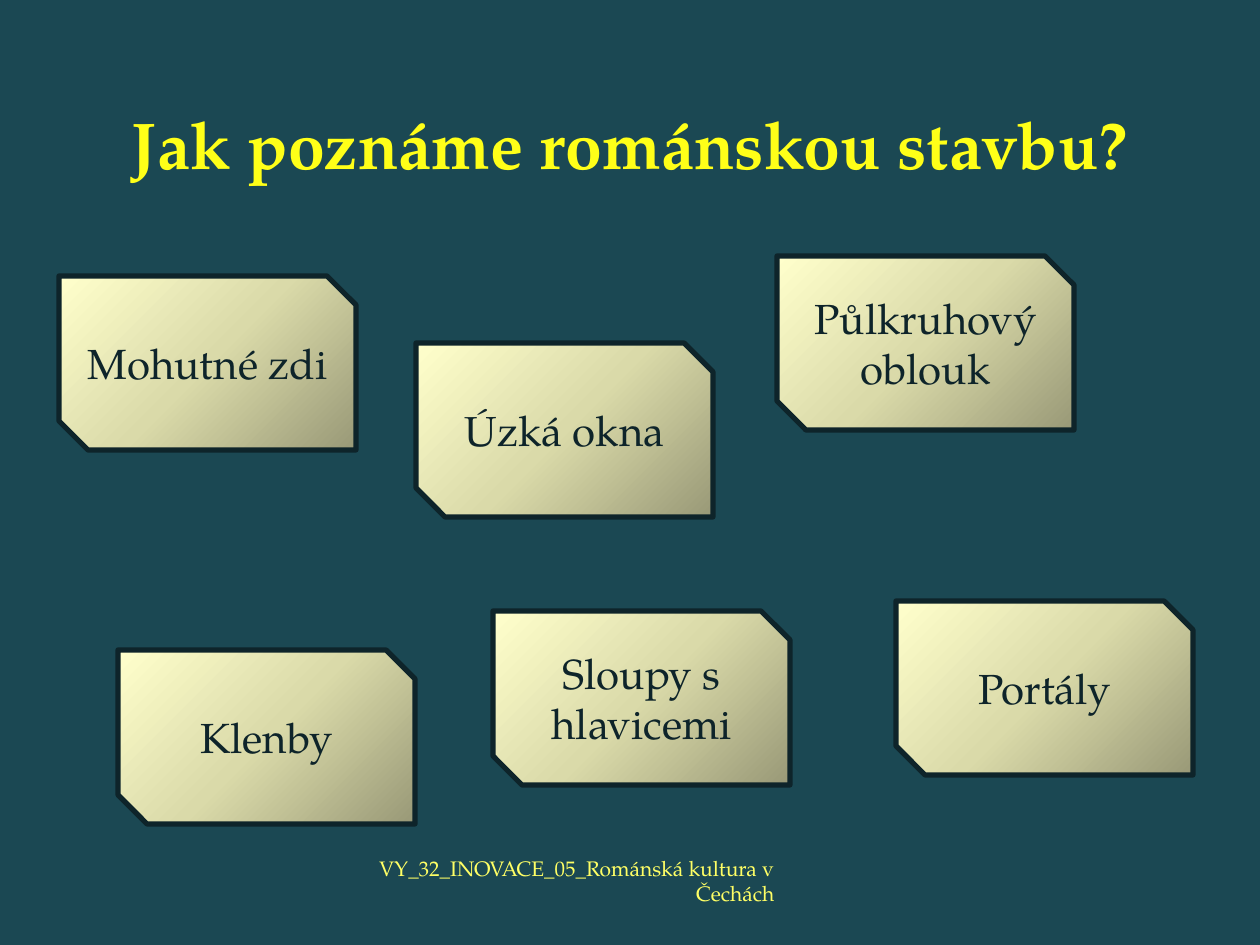
from typing import Any, NamedTuple

from pptx import Presentation
from pptx import util as u
from pptx.dml.color import RGBColor
from pptx.enum import shapes, text
from pptx.oxml import parse_xml
from pptx.oxml.ns import nsdecls

PX_PER_INCH = 126
FONT = "TeX Gyre Pagella"
BACKGROUND = "1B4853"
DARK = "0E242A"
TITLE_COLOR = "FFFF18"
FOOTER_COLOR = "FFFF65"
CARD_STOPS = ((0, "999977"), (50, "DADAA9"), (100, "FFFFCC"))
CARD_SIZE = (297, 174)


class Card(NamedTuple):
    left: int
    top: int
    label: str


CARDS = (
    Card(59, 276, "Mohutné zdi"),
    Card(416, 343, "Úzká okna"),
    Card(118, 650, "Klenby"),
    Card(896, 601, "Portály"),
    Card(777, 256, "Půlkruhový oblouk"),
    Card(493, 611, "Sloupy s hlavicemi"),
)


def px(length: int) -> int:
    return u.Inches(length / PX_PER_INCH)


def color(value: str) -> RGBColor:
    return RGBColor.from_string(value)


def write(shape: Any, content: str, size: float, hex_color: str, anchor: Any,
          alignment: Any, bold: bool = False) -> None:
    frame = shape.text_frame
    frame.text = content
    paragraph = frame.paragraphs[0]
    paragraph.alignment = alignment
    frame_format = {
        "word_wrap": True,
        "auto_size": text.MSO_AUTO_SIZE.NONE,
        "vertical_anchor": anchor,
    }
    for name, value in frame_format.items():
        setattr(frame, name, value)
    font = paragraph.runs[0].font
    for name, value in {"name": FONT, "size": u.Pt(size), "bold": bold}.items():
        setattr(font, name, value)
    font.color.rgb = color(hex_color)


def fill_from_corner(shape: Any) -> None:
    stops = "".join(
        f'<a:gs pos="{position * 1000}"><a:srgbClr val="{value}"/></a:gs>'
        for position, value in CARD_STOPS
    )
    gradient = parse_xml(
        f'<a:gradFill {nsdecls("a")} rotWithShape="1"><a:gsLst>{stops}</a:gsLst>'
        '<a:path path="circle"><a:fillToRect l="100000" t="100000"/></a:path>'
        "</a:gradFill>"
    )
    shape.fill.background()
    properties = shape.element.spPr
    properties.replace(properties.find("{*}noFill"), gradient)


def draw_card(slide: Any, card: Card) -> None:
    shape = slide.shapes.add_shape(
        shapes.MSO_SHAPE.SNIP_2_DIAG_RECTANGLE,
        px(card.left), px(card.top), *map(px, CARD_SIZE),
    )
    shape.shadow.inherit = False
    fill_from_corner(shape)
    shape.line.color.rgb = color(DARK)
    shape.line.width = u.Pt(3)
    write(shape, card.label, 24, DARK, text.MSO_ANCHOR.MIDDLE, text.PP_ALIGN.CENTER)


def draw_title(slide: Any) -> None:
    title = slide.shapes.title
    place = {"left": 63, "top": 21, "width": 1134, "height": 168}
    for name, value in place.items():
        setattr(title, name, px(value))
    write(title, "Jak poznáme románskou stavbu?", 37.8, TITLE_COLOR,
          text.MSO_ANCHOR.BOTTOM, text.PP_ALIGN.CENTER, bold=True)


def draw_footer(slide: Any) -> None:
    footer = slide.shapes.add_textbox(px(293), px(854), px(494), px(53))
    write(footer, "VY_32_INOVACE_05_Románská kultura v Čechách", 12, FOOTER_COLOR,
          text.MSO_ANCHOR.MIDDLE, text.PP_ALIGN.RIGHT)


def main() -> None:
    presentation = Presentation()
    presentation.slide_width = px(1260)
    presentation.slide_height = px(945)
    slide = presentation.slides.add_slide(presentation.slide_layouts[5])
    background = slide.background.fill
    background.solid()
    background.fore_color.rgb = color(BACKGROUND)
    draw_title(slide)
    for card in CARDS:
        draw_card(slide, card)
    draw_footer(slide)
    presentation.save("out.pptx")


if __name__ == "__main__":
    main()
